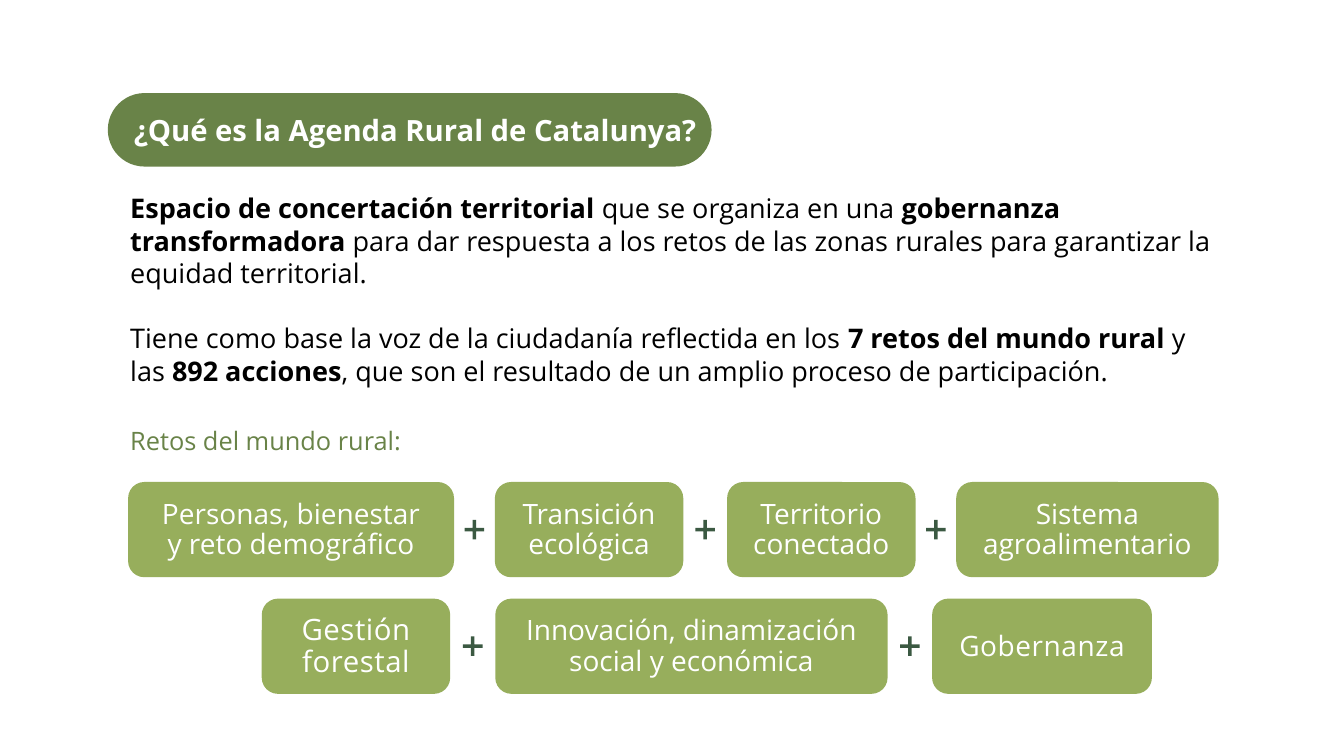
from pptx import Presentation
from pptx.dml.color import RGBColor
from pptx.enum.shapes import MSO_SHAPE as Shape
from pptx.enum.text import MSO_ANCHOR as Anchor, PP_ALIGN as Align
from pptx.util import Pt

FONT = "Open Sans"
DARK_GREEN, LEAF_GREEN, PLUS_GREEN = "698348", "97AE5C", "3B5942"
WHITE, BLACK = "FFFFFF", "000000"
CARD_HEIGHT, CARD_INSET, PLUS_SIZE = 68, 14.5, 14

# Each paragraph is a list of (text, bold).
INTRO = [
    [("Espacio de concertación territorial ", True),
     ("que se organiza en una ", False),
     ("gobernanza transformadora ", True),
     ("para dar respuesta a los retos de las zonas rurales para garantizar "
      "la equidad territorial.", False)],
    [("Tiene como base la voz de la ciudadanía reﬂectida en los ", False),
     ("7 retos del mundo rural", True),
     (" y las ", False),
     ("892 acciones", True),
     (", que son el resultado de un amplio proceso de participación.", False)],
]

# Each card is left, width, paragraphs, text size, letter spacing.
CARD_ROWS = [
    (344.3, [
        (91.5, 232.8, ["Personas, bienestar y reto demográfico"], 20, 0),
        (353.5, 134.6, ["Transición ecológica"], 20, 0),
        (519.4, 134.6, ["Territorio", "conectado"], 20, 0),
        (683, 187.4, ["Sistema agroalimentario"], 20, 0),
    ]),
    (427.6, [
        (187, 134.6, ["Gestión", "forestal"], 21, 0.4),
        (353.8, 280.2, ["Innovación, dinamización social y económica"], 20, 0),
        (665.8, 157, ["Gobernanza"], 20, 0.4),
    ]),
]


def color(hex_text):
    return RGBColor.from_string(hex_text)


def add_filled(page, kind, box, fill, adjustment):
    shape = page.shapes.add_shape(kind, *map(Pt, box))
    shape.adjustments[0] = adjustment
    shape.shadow.inherit = False
    shape.fill.solid()
    shape.fill.fore_color.rgb = color(fill)
    shape.line.fill.background()
    return shape


def write(frame, paragraphs, size, leading, ink, align=Align.LEFT,
          inset=0, gap=0, spacing=0):
    """Fill a text frame with paragraphs made of (text, bold) spans."""
    frame.word_wrap = True
    frame.margin_left = frame.margin_right = Pt(inset)
    frame.margin_top = frame.margin_bottom = 0
    for index, spans in enumerate(paragraphs):
        para = frame.add_paragraph() if index else frame.paragraphs[0]
        para.alignment = align
        para.line_spacing = Pt(leading)
        if index and gap:
            para.space_before = Pt(gap)
        para.font.name = FONT
        para.font.size = Pt(size)
        para.font.color.rgb = color(ink)
        for text, bold in spans:
            span = para.add_run()
            span.text = text
            span.font.bold = bold
            if spacing:
                span._r.get_or_add_rPr().set("spc", str(round(spacing * 100)))


def add_text(page, box, paragraphs, size, leading, ink, gap=0):
    frame = page.shapes.add_textbox(*map(Pt, box)).text_frame
    write(frame, paragraphs, size, leading, ink, gap=gap)


def add_title(page, box):
    """Draw the pill and lay the title over its full width."""
    left, top, width, height = box
    add_filled(page, Shape.ROUNDED_RECTANGLE, box, DARK_GREEN, 0.5)
    add_text(page, (left + 18.7, top + 9.1, width - 18.7, height - 18.2),
             [[("¿Qué es la Agenda Rural de Catalunya?", True)]],
             20.9, 29.3, WHITE)


def add_card(page, box, lines, size, spacing):
    card = add_filled(page, Shape.ROUNDED_RECTANGLE, box, LEAF_GREEN, 0.17)
    card.text_frame.vertical_anchor = Anchor.MIDDLE
    write(card.text_frame, [[(line, False)] for line in lines], size,
          size * 1.105, WHITE, Align.CENTER, CARD_INSET, spacing=spacing)


def add_card_row(page, top, cards):
    """Draw one row of cards with a plus in the middle of each gap."""
    for left, width, lines, size, spacing in cards:
        add_card(page, (left, top, width, CARD_HEIGHT), lines, size, spacing)
    plus_top = top + (CARD_HEIGHT - PLUS_SIZE) / 2
    for card, following in zip(cards, cards[1:]):
        middle = (card[0] + card[1] + following[0]) / 2
        add_filled(page, Shape.CROSS,
                   (middle - PLUS_SIZE / 2, plus_top, PLUS_SIZE, PLUS_SIZE),
                   PLUS_GREEN, 0.41)


def main():
    deck = Presentation()
    deck.slide_width, deck.slide_height = Pt(960), Pt(540)
    page = deck.slides.add_slide(deck.slide_layouts[6])
    add_title(page, (77, 66.5, 431.3, 52.5))
    add_text(page, (93, 137, 777, 140), INTRO, 19.3, 23.2, BLACK, gap=23.2)
    add_text(page, (93, 300.2, 200, 24), [[("Retos del mundo rural:", False)]],
             18.1, 25.4, DARK_GREEN)
    for top, cards in CARD_ROWS:
        add_card_row(page, top, cards)
    deck.save("out.pptx")


if __name__ == "__main__":
    main()
